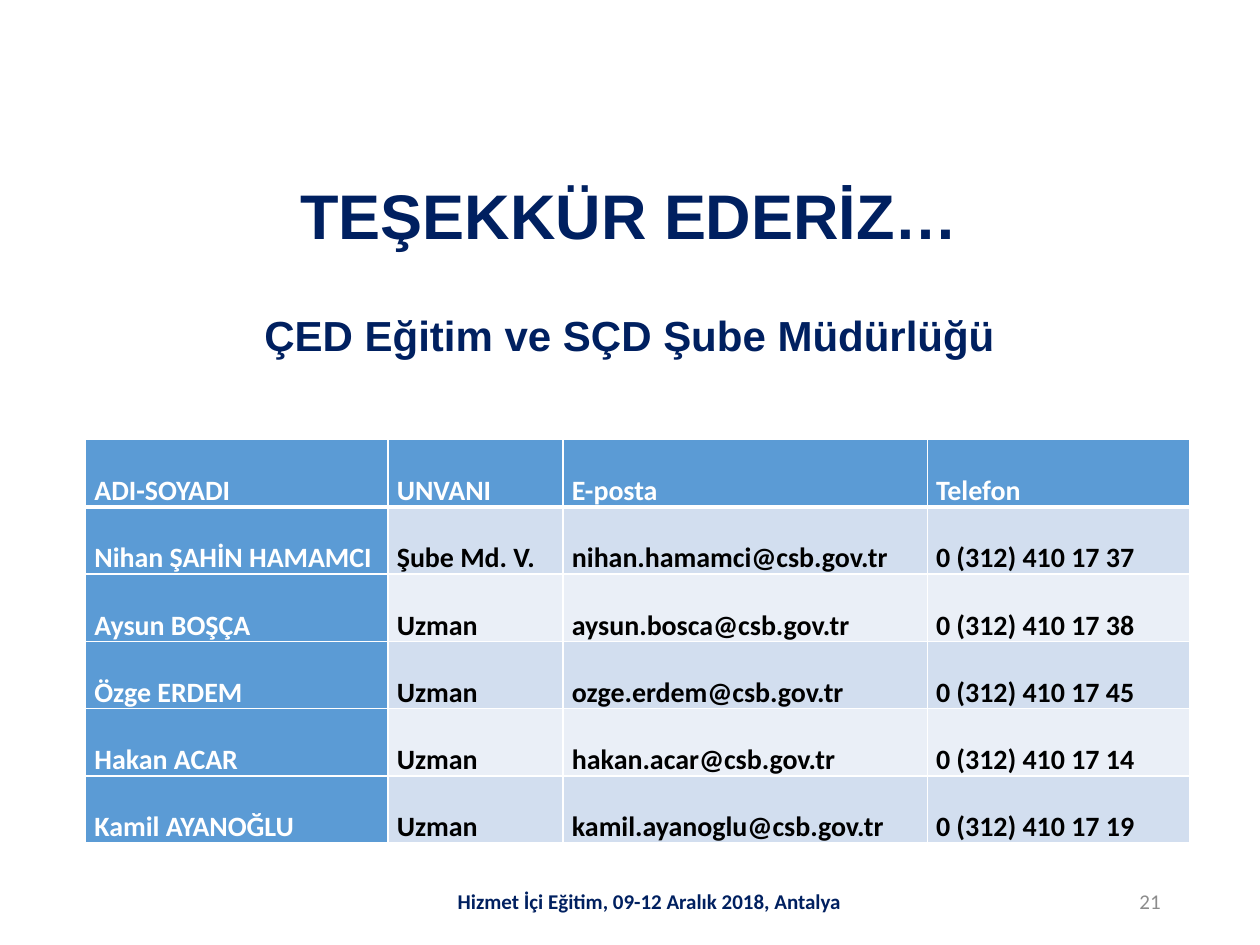
import dataclasses

import lxml.etree
import pptx
import pptx.dml.color
import pptx.enum.text
import pptx.oxml.ns
import pptx.util

ALIGN = pptx.enum.text.PP_ALIGN
ANCHOR = pptx.enum.text.MSO_ANCHOR
NAVY = "002060"
BLUE = "5B9BD5"
WHITE = "FFFFFF"
BLACK = "000000"
BANDS = ("D2DEEF", "EAEFF7")
COLUMN_WIDTHS = (24, 13.9, 28.9, 20.8)
HEADER = ("ADI-SOYADI", "UNVANI", "E-posta", "Telefon")


@dataclasses.dataclass
class Area:
    left: float
    top: float
    width: float
    height: float


@dataclasses.dataclass
class Style:
    size: float
    font: str
    color: str
    bold: bool = True


@dataclasses.dataclass
class Label:
    text: str
    area: Area
    style: Style
    align: ALIGN = ALIGN.CENTER
    anchor: ANCHOR = ANCHOR.MIDDLE
    bottom_inset: float = 0.05


@dataclasses.dataclass
class Contact:
    name: str
    title: str
    mail: str
    phone: str


LABELS = (
    Label("21", Area(70.6, 92.67, 22.5, 5.33),
          Style(12, "Calibri", "8C8C8C", False), ALIGN.RIGHT),
    Label("TEŞEKKÜR EDERİZ…", Area(11.6, 17.47, 76.7, 12.4),
          Style(36, "Arial", NAVY), bottom_inset=0.2),
    Label("ÇED Eğitim ve SÇD Şube Müdürlüğü", Area(20, 32.13, 70.8, 6.67),
          Style(24, "Arial", NAVY), ALIGN.LEFT, ANCHOR.TOP),
    Label("Hizmet İçi Eğitim, 09-12 Aralık 2018, Antalya",
          Area(34.2, 92.67, 34.7, 5.33), Style(12, "Calibri", NAVY)),
)
TABLE_AREA = Area(6.8, 46.53, sum(COLUMN_WIDTHS), 42.67)
CONTACTS = (
    Contact("Nihan ŞAHİN HAMAMCI", "Şube Md. V.", "nihan.hamamci@csb.gov.tr", "0 (312) 410 17 37"),
    Contact("Aysun BOŞÇA", "Uzman", "aysun.bosca@csb.gov.tr", "0 (312) 410 17 38"),
    Contact("Özge ERDEM", "Uzman", "ozge.erdem@csb.gov.tr", "0 (312) 410 17 45"),
    Contact("Hakan ACAR", "Uzman", "hakan.acar@csb.gov.tr", "0 (312) 410 17 14"),
    Contact("Kamil AYANOĞLU", "Uzman", "kamil.ayanoglu@csb.gov.tr", "0 (312) 410 17 19"),
)


def rgb(value: str) -> pptx.dml.color.RGBColor:
    return pptx.dml.color.RGBColor.from_string(value)


def share(percent: float, whole: int) -> int:
    return round(percent * whole / 100)


def place(deck, area: Area) -> tuple[int, int, int, int]:
    return (share(area.left, deck.slide_width), share(area.top, deck.slide_height),
            share(area.width, deck.slide_width), share(area.height, deck.slide_height))


def add_span(para, text: str, style: Style) -> None:
    span = para.add_run()
    span.text = text
    span.font.size = pptx.util.Pt(style.size)
    span.font.name = style.font
    span.font.bold = style.bold
    span.font.color.rgb = rgb(style.color)


def add_label(deck, page, label: Label) -> None:
    box = page.shapes.add_textbox(*place(deck, label.area))
    frame = box.text_frame
    frame.word_wrap = True
    frame.vertical_anchor = label.anchor
    frame.margin_bottom = pptx.util.Inches(label.bottom_inset)
    para = frame.paragraphs[0]
    para.alignment = label.align
    add_span(para, label.text, label.style)


def add_border(cell, side: str, points: float) -> None:
    properties = cell._tc.get_or_add_tcPr()
    line = lxml.etree.SubElement(properties, pptx.oxml.ns.qn(f"a:ln{side}"),
                                 w=str(pptx.util.Pt(points)))
    fill = lxml.etree.SubElement(line, pptx.oxml.ns.qn("a:solidFill"))
    lxml.etree.SubElement(fill, pptx.oxml.ns.qn("a:srgbClr"), val=WHITE)


def fill_cell(cell, text: str, row: int, column: int) -> None:
    heading = row == 0 or column == 0
    cell.margin_left = cell.margin_right = pptx.util.Inches(0.07)
    cell.margin_top = cell.margin_bottom = 0
    for side in "LRTB":
        thick = (row, side) in ((0, "B"), (1, "T"))
        add_border(cell, side, 3 if thick else 1)
    cell.fill.solid()
    cell.fill.fore_color.rgb = rgb(BLUE if heading else BANDS[(row - 1) % 2])
    para = cell.text_frame.paragraphs[0]
    para.line_spacing = 2.0
    add_span(para, text, Style(16, "Calibri", WHITE if heading else BLACK))


def add_contacts(deck, page) -> None:
    rows = [HEADER, *map(dataclasses.astuple, CONTACTS)]
    table = page.shapes.add_table(len(rows), len(HEADER), *place(deck, TABLE_AREA)).table
    for column, width in zip(table.columns, COLUMN_WIDTHS):
        column.width = share(width, deck.slide_width)
    for row, texts in enumerate(rows):
        for column, text in enumerate(texts):
            fill_cell(table.cell(row, column), text, row, column)


def main() -> None:
    deck = pptx.Presentation()
    deck.slide_width = pptx.util.Inches(10)
    deck.slide_height = pptx.util.Inches(7.5)
    page = deck.slides.add_slide(deck.slide_layouts[6])
    for label in LABELS:
        add_label(deck, page, label)
    add_contacts(deck, page)
    deck.save("out.pptx")


if __name__ == "__main__":
    main()
